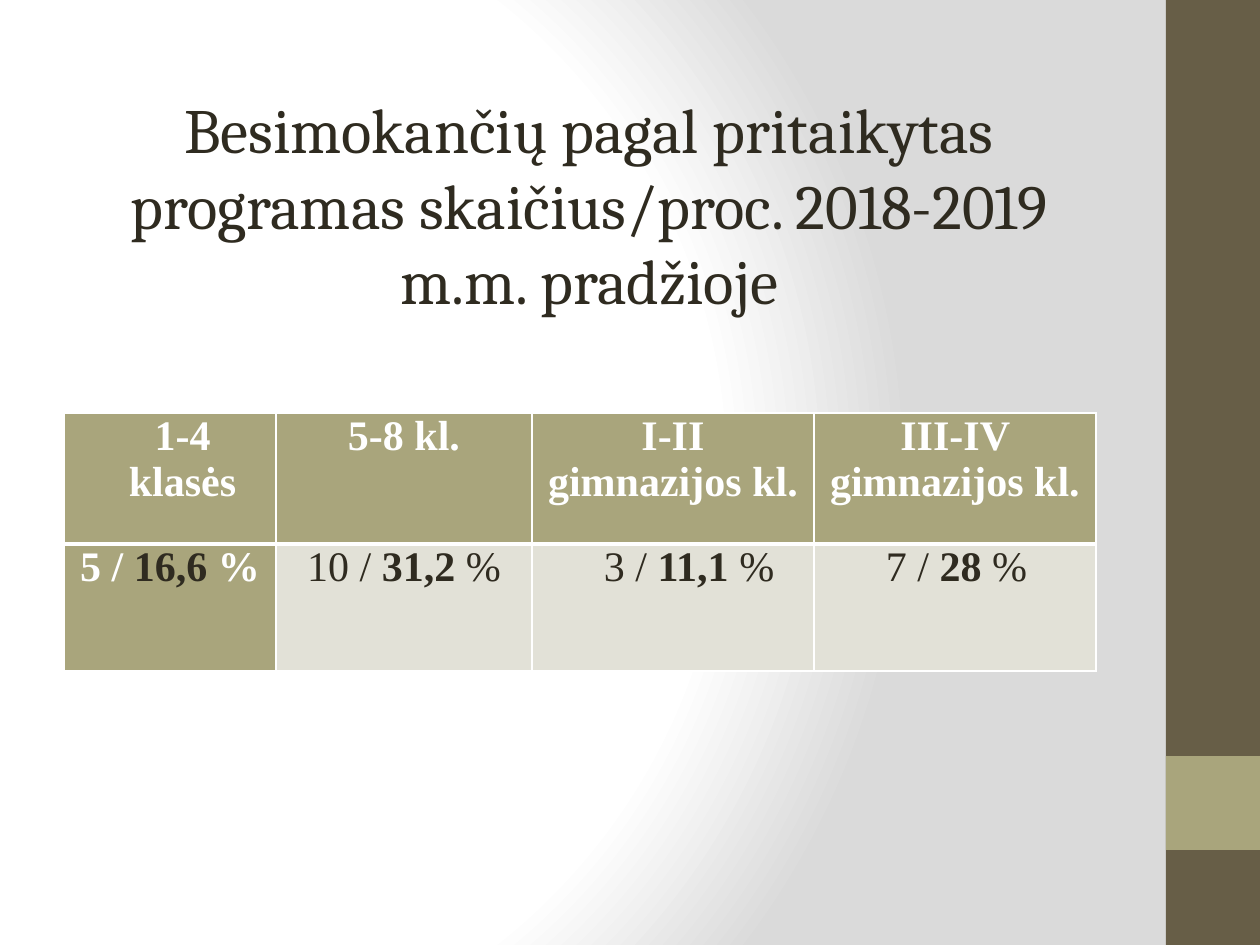
from lxml import etree
from pptx import Presentation
from pptx.dml.color import RGBColor
from pptx.enum.shapes import MSO_SHAPE
from pptx.enum.text import MSO_ANCHOR, MSO_AUTO_SIZE, PP_ALIGN
from pptx.oxml.ns import qn
from pptx.util import Emu, Pt

PX = 914400 // 126
RECTANGLE = MSO_SHAPE.RECTANGLE
MIDDLE, TOP = MSO_ANCHOR.MIDDLE, MSO_ANCHOR.TOP
NO_AUTOFIT = MSO_AUTO_SIZE.NONE
CENTER, LEFT = PP_ALIGN.CENTER, PP_ALIGN.LEFT

WHITE = RGBColor(0xFF, 0xFF, 0xFF)
SILVER = RGBColor(0xDA, 0xDA, 0xDA)
BROWN = RGBColor(0x67, 0x5E, 0x47)
OLIVE = RGBColor(0xA9, 0xA5, 0x7C)
PALE = RGBColor(0xE2, 0xE1, 0xD7)
INK = RGBColor(0x2F, 0x2B, 0x20)

TITLE = "Besimokančių pagal pritaikytas programas skaičius/proc. 2018-2019 m.m. pradžioje"
CLASSES = [("1-4 klasės", 25), ("5-8 kl.", 0),
           ("I-II gimnazijos kl.", 0), ("III-IV gimnazijos kl.", 0)]
RESULTS = [("5 / ", "16,6 ", CENTER, 0), ("10 / ", "31,2 ", CENTER, 0),
           ("3 / ", "11,1 ", LEFT, 63), ("7 / ", "28 ", LEFT, 63)]
COLUMN_WIDTHS = [212, 256, 282, 282]
ROW_HEIGHTS = [131, 127]


def px(length):
    """Turn px into EMU."""
    return Emu(length * PX)


def add_xml(parent, tag, **attributes):
    """Append a DrawingML element and return it."""
    return etree.SubElement(parent, qn(tag), {k: str(v) for k, v in attributes.items()})


def paint_background(slide):
    """Fill the background with a circular white to silver gradient."""
    slide.background.fill.gradient()
    gradient = slide.element.xpath(".//p:bg//a:gradFill")[0]
    for child in list(gradient):
        gradient.remove(child)
    stops = add_xml(gradient, "a:gsLst")
    for position, color in ((0, WHITE), (75, WHITE), (100, SILVER)):
        stop = add_xml(stops, "a:gs", pos=position * 1000)
        add_xml(stop, "a:srgbClr", val=color)
    circle = add_xml(gradient, "a:path", path="circle")
    add_xml(circle, "a:fillToRect", l=20000, t=50000, r=100000, b=50000)


def add_side_band(slide, left, top, width, height):
    """Draw the brown band with its olive square."""
    for y, band_height, color in ((top, height, BROWN), (top + 756, width, OLIVE)):
        band = slide.shapes.add_shape(RECTANGLE, px(left), px(y), px(width), px(band_height))
        band.shadow.inherit = False
        band.fill.solid()
        band.fill.fore_color.rgb = color
        band.line.fill.background()


def style_run(run, font, size, color, bold):
    """Set the font of a run."""
    run.font.name = font
    run.font.size = Pt(size)
    run.font.color.rgb = color
    run.font.bold = bold


def place_title(slide, left, top, width, height):
    """Move and format the title placeholder."""
    title = slide.shapes.title
    title.left, title.top, title.width, title.height = map(px, (left, top, width, height))
    frame = title.text_frame
    frame.text = TITLE
    frame.word_wrap = True
    frame.auto_size = NO_AUTOFIT
    frame.vertical_anchor = MIDDLE
    heading = frame.paragraphs[0]
    heading.alignment = CENTER
    style_run(heading.runs[0], "Cambria", 36, INK, False)


def fill_cell(cell, parts, align, indent, fill, bottom_width):
    """Write styled parts into a cell and set its borders and fill."""
    cell.margin_left = cell.margin_right = px(9)
    cell.margin_top = cell.margin_bottom = 0
    cell.vertical_anchor = TOP
    paragraph = cell.text_frame.paragraphs[0]
    paragraph.alignment = align
    for words, color, bold in parts:
        run = paragraph.add_run()
        run.text = words
        style_run(run, "Times New Roman", 24, color, bold)
    properties = cell.text_frame.paragraphs[0].runs[0].font
    if indent:
        pPr = cell.text_frame._txBody.xpath("./a:p/a:pPr")[0]
        pPr.set("marL", str(px(indent)))
        pPr.set("indent", "0")
    tcPr = cell._tc.get_or_add_tcPr()
    for side, width in (("L", 1), ("R", 1), ("T", 1), ("B", bottom_width)):
        border = add_xml(tcPr, f"a:ln{side}", w=Pt(width))
        add_xml(add_xml(border, "a:solidFill"), "a:srgbClr", val=WHITE)
    cell.fill.solid()
    cell.fill.fore_color.rgb = fill


def add_results_table(slide, left, top):
    """Add the table of pupil counts and percentages by class group."""
    table = slide.shapes.add_table(
        len(ROW_HEIGHTS), len(COLUMN_WIDTHS), px(left), px(top),
        px(sum(COLUMN_WIDTHS)), px(sum(ROW_HEIGHTS))).table
    table.first_col = True
    for column, width in zip(table.columns, COLUMN_WIDTHS):
        column.width = px(width)
    for row, height in zip(table.rows, ROW_HEIGHTS):
        row.height = px(height)
    for index, (label, indent) in enumerate(CLASSES):
        fill_cell(table.cell(0, index), [(label, WHITE, True)], CENTER, indent, OLIVE, 3)
    for index, (count, percent, align, indent) in enumerate(RESULTS):
        first = index == 0
        color, fill = (WHITE, OLIVE) if first else (INK, PALE)
        parts = [(count, color, first), (percent, INK, True), ("%", color, first)]
        fill_cell(table.cell(1, index), parts, align, indent, fill, 1)


def main():
    """Build and save the slide."""
    deck = Presentation()
    deck.slide_width, deck.slide_height = px(1260), px(945)
    slide = deck.slides.add_slide(deck.slide_layouts[5])
    paint_background(slide)
    add_side_band(slide, 1166, 0, 94, 945)
    place_title(slide, 64, 125, 1050, 158)
    add_results_table(slide, 64, 413)
    deck.save("out.pptx")


if __name__ == "__main__":
    main()
